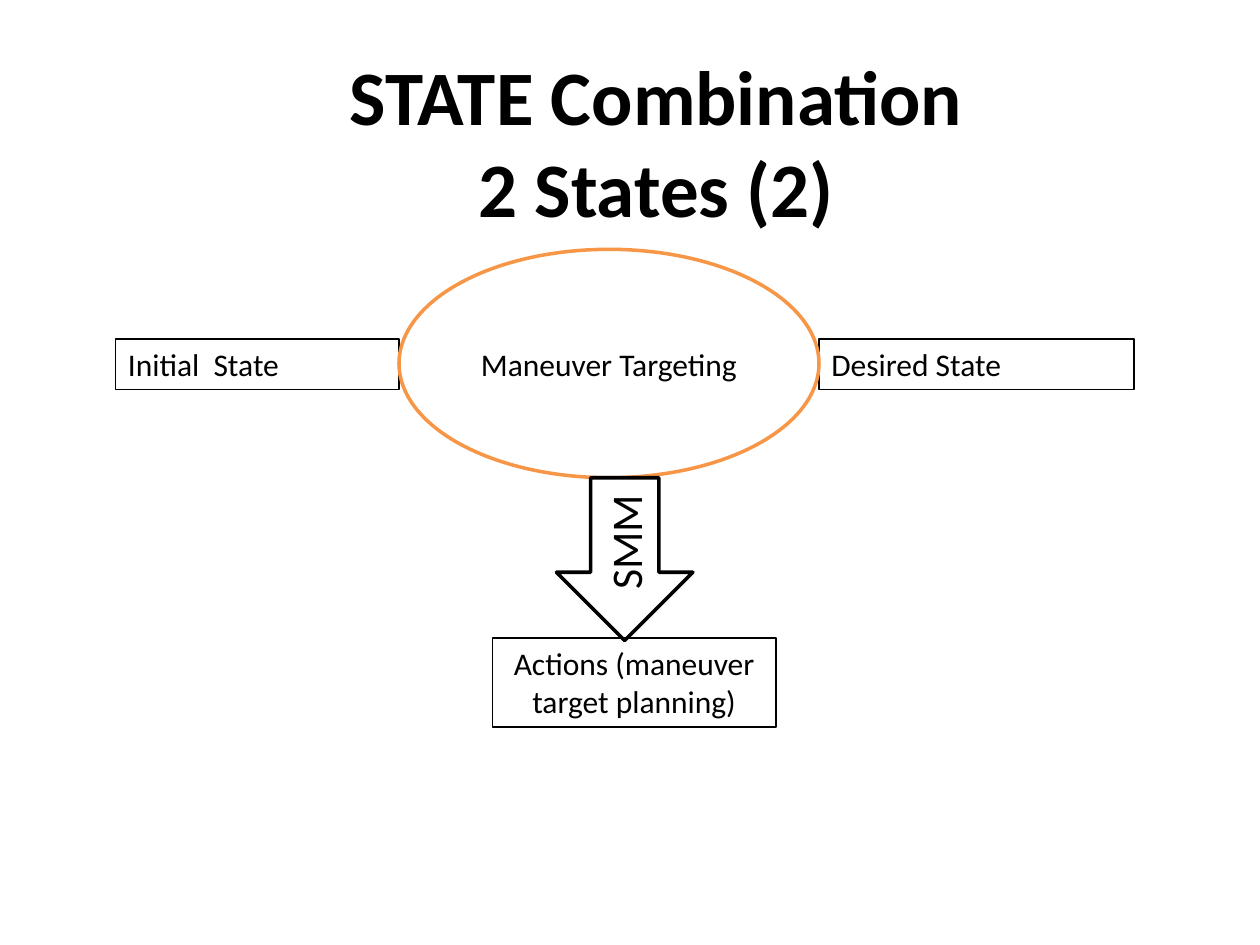
from pptx import Presentation
from pptx import util as u
from pptx.dml.color import RGBColor
from pptx.enum import shapes, text

# The slide is a grid of 120 columns by 90 rows
CELL = 1 / 12
FONT = "Calibri"
BLACK, WHITE, ORANGE = "000000", "FFFFFF", "F79646"
LEFT, CENTER = text.PP_ALIGN.LEFT, text.PP_ALIGN.CENTER
TOP, MIDDLE = text.MSO_ANCHOR.TOP, text.MSO_ANCHOR.MIDDLE
STATE_ROW, STATE_ROWS = 32.3, 4.8


def color(value):
    return RGBColor.from_string(value)


def grid(*cells):
    return [u.Inches(cell * CELL) for cell in cells]


def write(shape, words, size, align, anchor, bold=False):
    frame = shape.text_frame
    frame.word_wrap = True
    frame.auto_size = text.MSO_AUTO_SIZE.NONE
    frame.vertical_anchor = anchor
    paragraph = frame.paragraphs[0]
    paragraph.text = words
    paragraph.alignment = align
    for run in paragraph.runs:
        run.font.name = FONT
        run.font.size = u.Pt(size)
        run.font.bold = bold
        run.font.color.rgb = color(BLACK)


def add_title(slide, words, place):
    title = slide.shapes.title
    title.left, title.top, title.width, title.height = grid(*place)
    write(title, words, 44, CENTER, TOP, bold=True)


def add_outline(slide, kind, place, line, width, fill=None):
    shape = slide.shapes.add_shape(kind, *grid(*place))
    shape.shadow.inherit = False
    shape.line.color.rgb = color(line)
    shape.line.width = u.Pt(width)
    if fill:
        shape.fill.solid()
        shape.fill.fore_color.rgb = color(fill)
    else:
        shape.fill.background()
    return shape


def add_box(slide, words, place, align=LEFT):
    box = add_outline(slide, shapes.MSO_SHAPE.RECTANGLE, place, BLACK, 0.75)
    write(box, words, 18, align, TOP)


def add_process(slide, words, place):
    process = add_outline(slide, shapes.MSO_SHAPE.OVAL, place, ORANGE, 2)
    write(process, words, 18, CENTER, MIDDLE)
    frame = process.text_frame
    frame.margin_left = frame.margin_right = 0
    frame.margin_top = frame.margin_bottom = 0


def add_down_arrow(slide, words, place):
    arrow = add_outline(slide, shapes.MSO_SHAPE.DOWN_ARROW, place, BLACK, 2, WHITE)
    write(arrow, words, 25, CENTER, MIDDLE)
    # Text reads from bottom to top
    arrow.element.txBody.bodyPr.set("vert", "vert270")


def main():
    presentation = Presentation()
    presentation.slide_width, presentation.slide_height = grid(120, 90)
    slide = presentation.slides.add_slide(presentation.slide_layouts[5])

    add_title(slide, "STATE Combination\n2 States (2)", (28, 4, 69, 19))

    # The two states on either side of the process
    add_box(slide, "Initial  State", (11, STATE_ROW, 27, STATE_ROWS))
    add_box(slide, "Desired State", (78, STATE_ROW, 30, STATE_ROWS))
    add_process(slide, "Maneuver Targeting", (38, 23.75, 40, 21.75))

    # The resulting actions
    add_down_arrow(slide, "SMM", (53, 45.5, 13, 15.5))
    add_box(slide, "Actions (maneuver target planning)", (46.9, 60.75, 27, 8.5), CENTER)

    presentation.save("out.pptx")


if __name__ == "__main__":
    main()
